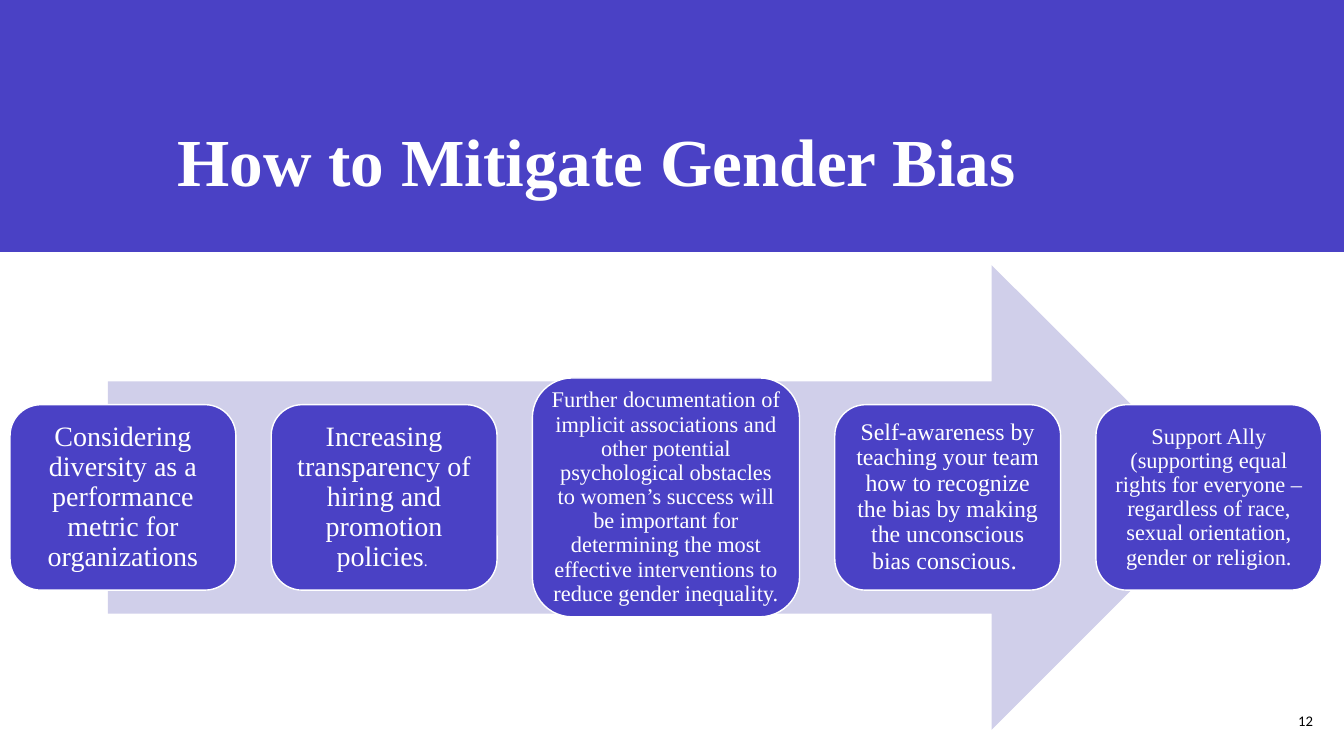
from pptx import Presentation
from pptx.dml.color import RGBColor
from pptx.enum.shapes import MSO_SHAPE
from pptx.enum.text import MSO_ANCHOR, PP_ALIGN
from pptx.util import Inches, Pt

RECT, ARROW, ROUNDED = MSO_SHAPE.RECTANGLE, MSO_SHAPE.RIGHT_ARROW, MSO_SHAPE.ROUNDED_RECTANGLE
MIDDLE, BOTTOM = MSO_ANCHOR.MIDDLE, MSO_ANCHOR.BOTTOM
CENTER, RIGHT = PP_ALIGN.CENTER, PP_ALIGN.RIGHT
COLORS = {"violet": "4A41C5", "lavender": "D0CFEA", "white": "FFFFFF", "black": "000000"}
SERIF = "Times New Roman"


def add_block(kind, x, y, w, h, fill):
    sp = s.shapes.add_shape(kind, Inches(x), Inches(y), Inches(w), Inches(h))
    sp.shadow.inherit = False
    sp.fill.solid()
    sp.fill.fore_color.rgb = RGBColor.from_string(COLORS[fill])
    sp.line.fill.background()
    return sp


def set_text(sp, text, size, font, color, align=CENTER, anchor=MIDDLE):
    tf = sp.text_frame
    tf.word_wrap = True
    tf.vertical_anchor = anchor
    p = tf.paragraphs[0]
    p.alignment = align
    p.font.size = Pt(size)
    p.font.name = font
    p.font.color.rgb = RGBColor.from_string(COLORS[color])
    p.add_run().text = text
    return p


prs = Presentation()
prs.slide_width = Inches(13.33)
prs.slide_height = Inches(7.5)
s = prs.slides.add_slide(prs.slide_layouts[6])

add_block(RECT, 0, 0, 13.33, 2.5, "violet")
title = s.shapes.add_textbox(Inches(0.71), Inches(0.4), Inches(10.42), Inches(1.64))
p = set_text(title, "How to Mitigate Gender Bias", 48, SERIF, "white", anchor=BOTTOM)
p.font.bold = True
p.line_spacing = 0.9

add_block(ARROW, 1.07, 2.63, 11.07, 4.61, "lavender")

steps = [
    ("Considering diversity as a performance metric for organizations", 20, None, 2.24, 1.84, 0.08),
    ("Increasing transparency of hiring and promotion policies", 20, 11, 2.24, 1.84, 0.08),
    ("Further documentation of implicit associations and other potential psychological "
     "obstacles to women’s success will be important for determining the most effective "
     "interventions to reduce gender inequality.", 16, None, 2.65, 2.37, 0.07),
    ("Self-awareness by teaching your team how to recognize the bias by making the "
     "unconscious bias conscious", 17, 18, 2.24, 1.84, 0.07),
    ("Support Ally (supporting equal rights for everyone – regardless of race, sexual "
     "orientation, gender or religion.", 16, None, 2.24, 1.84, 0.07),
]
gap, middle_y = 0.35, 4.935
x = 0.1
for text, size, stop_size, w, h, inset in steps:
    sp = add_block(ROUNDED, x, middle_y - h / 2, w, h, "violet")
    sp.line.color.rgb = RGBColor.from_string(COLORS["white"])
    sp.line.width = Pt(1)
    tf = sp.text_frame
    tf.margin_left = tf.margin_right = tf.margin_top = tf.margin_bottom = Inches(inset)
    p = set_text(sp, text, size, SERIF, "white")
    p.line_spacing = 0.9
    if stop_size:
        r = p.add_run()
        r.text = ". "
        r.font.size = Pt(stop_size)
    x += w + gap

number = s.shapes.add_textbox(Inches(12.43), Inches(6.95), Inches(0.69), Inches(0.4))
set_text(number, "12", 10.5, "Calibri", "black", align=RIGHT)

prs.save("out.pptx")
